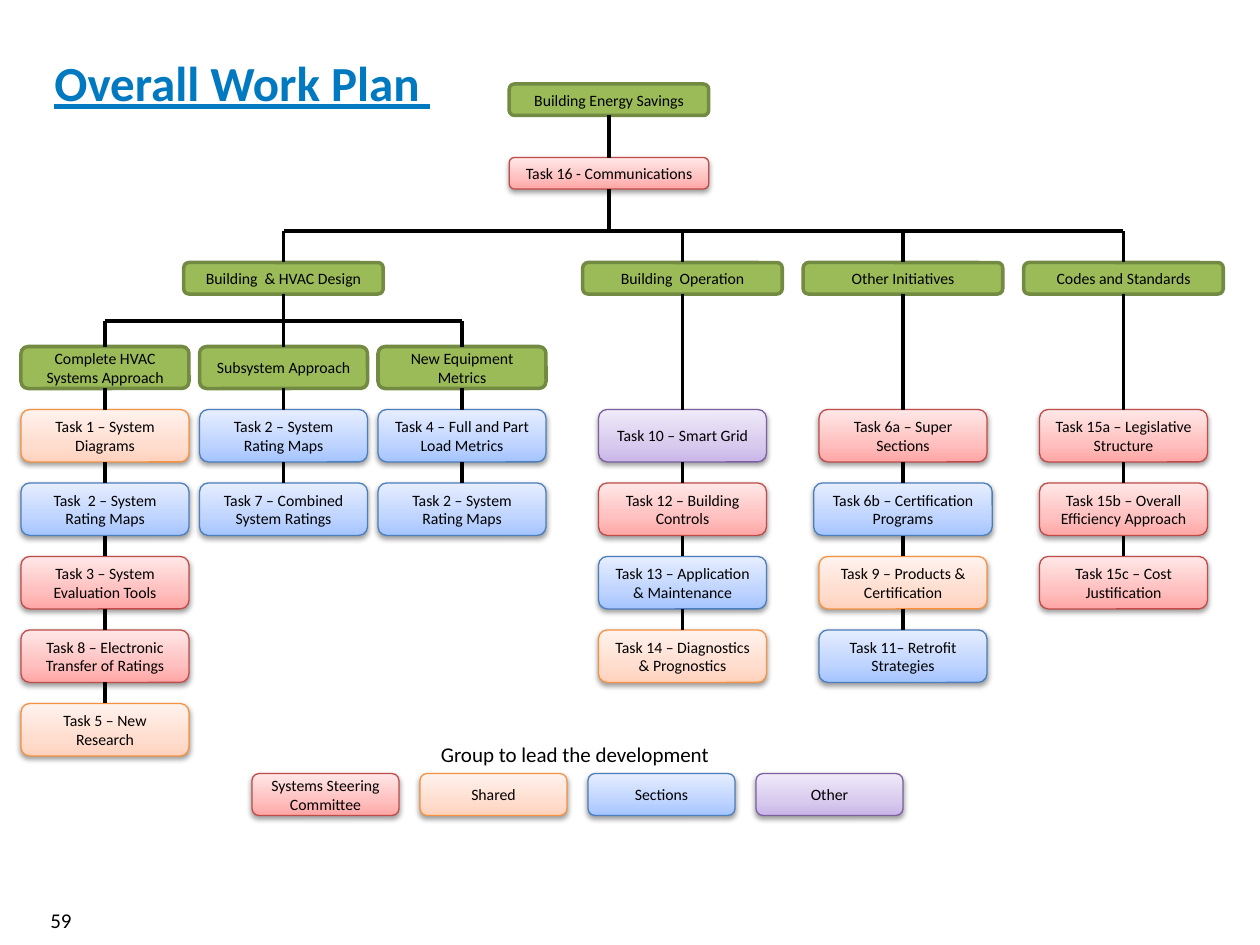
from copy import deepcopy

from lxml import etree
from pptx import Presentation
from pptx.dml.color import RGBColor
from pptx.enum.shapes import MSO_CONNECTOR, MSO_SHAPE
from pptx.enum.text import MSO_ANCHOR, PP_ALIGN
from pptx.oxml.ns import qn
from pptx.util import Pt

STRAIGHT = MSO_CONNECTOR.STRAIGHT
ROUNDED = MSO_SHAPE.ROUNDED_RECTANGLE
MIDDLE, TOP = MSO_ANCHOR.MIDDLE, MSO_ANCHOR.TOP
LEFT, CENTER, RIGHT = PP_ALIGN.LEFT, PP_ALIGN.CENTER, PP_ALIGN.RIGHT
BOX_TOP, BOX_BOTTOM = 0, 2
FONT = "Calibri"

COLORS = {"title": "0079C1", "text": "000000", "line": "000000",
          "group": "9BBB59", "group_line": "738A42"}
LEADS = {
    "steering": ("BF4C48", ("FFA6A5", "FFC0BF", "FFE7E7")),
    "shared": ("F69240", ("FFD2BD", "FFDED0", "FFF2ED")),
    "sections": ("4B7EBC", ("A4C4FF", "BFD4FF", "E6EEFF")),
    "other": ("7D60A0", ("C9B5E8", "D8CBEE", "F0EAF9")),
}
GRADIENT_POSITIONS = (0, 0.35, 1)

DESIGN = ("Building  & HVAC Design", 162)
APPROACHES = [
    ("Complete HVAC Systems Approach", 60, [
        ("Task 1 – System Diagrams", "shared"),
        ("Task  2 – System Rating Maps", "sections"),
        ("Task 3 – System Evaluation Tools", "steering"),
        ("Task 8 – Electronic Transfer of Ratings", "steering"),
        ("Task 5 – New Research", "shared")]),
    ("Subsystem Approach", 162, [
        ("Task 2 – System Rating Maps", "sections"),
        ("Task 7 – Combined System Ratings", "sections")]),
    ("New Equipment Metrics", 264, [
        ("Task 4 – Full and Part Load Metrics", "sections"),
        ("Task 2 – System Rating Maps", "sections")]),
]
BRANCHES = [
    ("Building  Operation", 390, [
        ("Task 10 – Smart Grid", "other"),
        ("Task 12 – Building Controls", "steering"),
        ("Task 13 – Application & Maintenance", "sections"),
        ("Task 14 – Diagnostics & Prognostics", "shared")]),
    ("Other Initiatives", 516, [
        ("Task 6a – Super Sections", "steering"),
        ("Task 6b – Certification Programs", "sections"),
        ("Task 9 – Products & Certification", "shared"),
        ("Task 11– Retrofit Strategies", "sections")]),
    ("Codes and Standards", 642, [
        ("Task 15a – Legislative Structure", "steering"),
        ("Task 15b – Overall Efficiency Approach", "steering"),
        ("Task 15c – Cost Justification", "steering")]),
]
LEGEND = [("Systems Steering Committee", "steering"), ("Shared", "shared"),
          ("Sections", "sections"), ("Other", "other")]
WIDE_TASKS = {"Task 6b – Certification Programs": 102}

ROOT_X = 348
HEAD_W, HEAD_H, HEAD_Y = 114, 18, 150
SUBHEAD_H, SUBHEAD_Y = 24, 198
TASK_W, TASK_H, TASK_Y, TASK_STEP = 96, 30, 234, 42
BUS_Y, DESIGN_BUS_Y = 132, 183.6
LEGEND_X, LEGEND_Y, LEGEND_W, LEGEND_H, LEGEND_STEP = 186, 442, 84, 24, 96

prs = Presentation()
prs.slide_width, prs.slide_height = Pt(720), Pt(540)
s = prs.slides.add_slide(prs.slide_layouts[6])


def rgb(value):
    return RGBColor.from_string(value)


def write(sp, text, size, color, align, anchor=MIDDLE, wrap=True):
    tf = sp.text_frame
    tf.word_wrap, tf.vertical_anchor = wrap, anchor
    p = tf.paragraphs[0]
    p.alignment = align
    r = p.add_run()
    r.text = text
    r.font.name, r.font.size = FONT, Pt(size)
    r.font.color.rgb = rgb(color)
    return r


def add_text(x, y, w, h, *args, **kwargs):
    return write(s.shapes.add_textbox(Pt(x), Pt(y), Pt(w), Pt(h)), *args, **kwargs)


def add_shadow(sp):
    effects = sp._element.spPr.find(qn("a:effectLst"))
    shadow = etree.SubElement(effects, qn("a:outerShdw"), blurRad=str(Pt(3.1)),
                              dist=str(Pt(1.6)), dir="5400000", rotWithShape="0")
    color = etree.SubElement(shadow, qn("a:srgbClr"), val="000000")
    etree.SubElement(color, qn("a:alpha"), val="38000")


def fill_gradient(sp, colors):
    sp.fill.gradient()
    sp.fill.gradient_angle = 90
    stops = sp._element.spPr.find(".//" + qn("a:gsLst"))
    stops.append(deepcopy(stops[0]))
    for stop, position, color in zip(sp.fill.gradient_stops, GRADIENT_POSITIONS, colors):
        stop.color.rgb = rgb(color)
        stop.position = position


def add_box(text, center, y, w, h, lead=None):
    sp = s.shapes.add_shape(ROUNDED, Pt(center - w / 2), Pt(y), Pt(w), Pt(h))
    sp.shadow.inherit = False
    if lead:
        line_color, colors = LEADS[lead]
        fill_gradient(sp, colors)
        add_shadow(sp)
    else:
        line_color = COLORS["group_line"]
        sp.fill.solid()
        sp.fill.fore_color.rgb = rgb(COLORS["group"])
    sp.line.color.rgb = rgb(line_color)
    sp.line.width = Pt(0.75 if lead else 2)
    write(sp, text, 9, COLORS["text"], CENTER)
    return sp


def add_line(start=(0, 0), end=(0, 0), above=None, below=None):
    line = s.shapes.add_connector(STRAIGHT, *(Pt(v) for v in (*start, *end)))
    line.line.color.rgb = rgb(COLORS["line"])
    line.line.width = Pt(2.25)
    etree.SubElement(line._element.spPr, qn("a:effectLst"))
    if above is not None:
        line.begin_connect(above, BOX_BOTTOM)
    if below is not None:
        line.end_connect(below, BOX_TOP)


def add_tasks(head, center, tasks):
    above = head
    for i, (text, lead) in enumerate(tasks):
        box = add_box(text, center, TASK_Y + i * TASK_STEP,
                      WIDE_TASKS.get(text, TASK_W), TASK_H, lead)
        add_line(above=above, below=box)
        above = box


title = add_text(24, 21.6, 672, 50.4, "Overall Work Plan ", 28, COLORS["title"], LEFT)
title.font.bold = title.font.underline = True
add_text(0, 511.2, 48, 28.8, "59", 12, COLORS["text"], RIGHT)

root = add_box("Building Energy Savings", ROOT_X, 48, HEAD_W, HEAD_H)
communications = add_box("Task 16 - Communications", ROOT_X, 90, HEAD_W, HEAD_H, "steering")
add_line(above=root, below=communications)
add_line(end=(ROOT_X, BUS_Y), above=communications)
add_line((DESIGN[1], BUS_Y), (BRANCHES[-1][1], BUS_Y))

for text, center, tasks in [(*DESIGN, [])] + BRANCHES:
    head = add_box(text, center, HEAD_Y, HEAD_W, HEAD_H)
    add_line(start=(center, BUS_Y), below=head)
    add_tasks(head, center, tasks)
    if text == DESIGN[0]:
        add_line(end=(center, DESIGN_BUS_Y), above=head)

add_line((APPROACHES[0][1], DESIGN_BUS_Y), (APPROACHES[-1][1], DESIGN_BUS_Y))
for text, center, tasks in APPROACHES:
    subhead = add_box(text, center, SUBHEAD_Y, TASK_W, SUBHEAD_H)
    add_line(start=(center, DESIGN_BUS_Y), below=subhead)
    add_tasks(subhead, center, tasks)

add_text(244.8, 420, 169.2, 21.6, "Group to lead the development", 12,
         COLORS["text"], LEFT, TOP, False)
for i, (text, lead) in enumerate(LEGEND):
    add_box(text, LEGEND_X + i * LEGEND_STEP, LEGEND_Y, LEGEND_W, LEGEND_H, lead)

prs.save("out.pptx")
